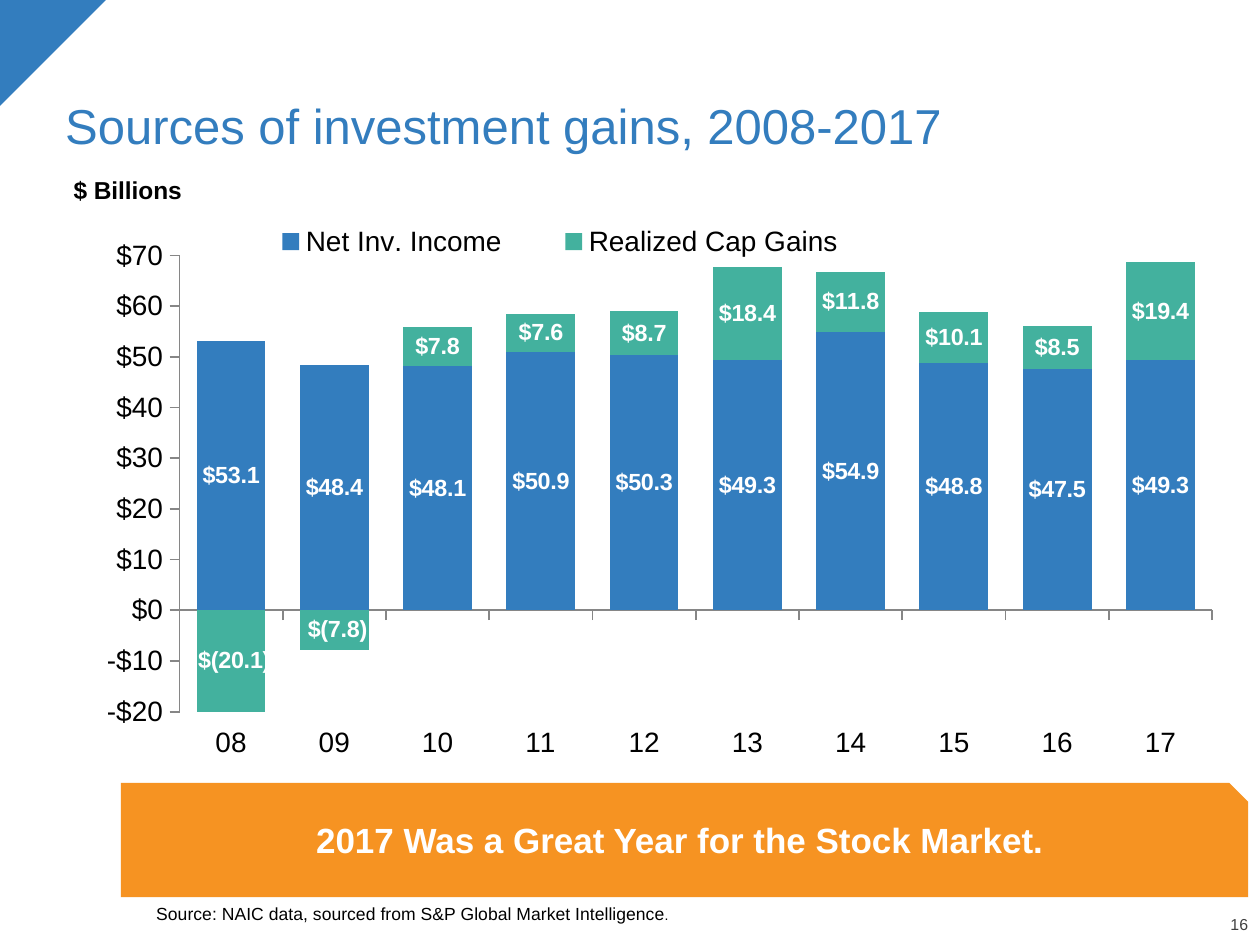
from lxml import etree
from pptx import Presentation
from pptx.chart.data import CategoryChartData
from pptx.dml.color import RGBColor
from pptx.enum.chart import (XL_CHART_TYPE, XL_LABEL_POSITION,
                             XL_LEGEND_POSITION, XL_TICK_LABEL_POSITION,
                             XL_TICK_MARK)
from pptx.enum.shapes import MSO_SHAPE
from pptx.enum.text import MSO_ANCHOR, PP_ALIGN
from pptx.oxml.ns import qn
from pptx.util import Inches, Pt

STACKED = XL_CHART_TYPE.COLUMN_STACKED
LABEL_CENTER = XL_LABEL_POSITION.CENTER
LEGEND_BOTTOM = XL_LEGEND_POSITION.BOTTOM
LABELS_LOW = XL_TICK_LABEL_POSITION.LOW
TICK_OUT, TICK_NONE = XL_TICK_MARK.OUTSIDE, XL_TICK_MARK.NONE
TRIANGLE, SNIPPED = MSO_SHAPE.RIGHT_TRIANGLE, MSO_SHAPE.SNIP_1_RECTANGLE
MIDDLE, BOTTOM = MSO_ANCHOR.MIDDLE, MSO_ANCHOR.BOTTOM
LEFT, CENTER, RIGHT = PP_ALIGN.LEFT, PP_ALIGN.CENTER, PP_ALIGN.RIGHT

FONT = "Arial"
BLUE, GREEN, ORANGE = "337DBE", "43B19E", "F69322"
BLACK, WHITE, GRAY, AXIS_GRAY = "000000", "FFFFFF", "404040", "868686"
LABEL_FORMAT = '_("$"* #,##0.0_);_("$"* \\(#,##0.0\\)'

YEARS = ["08", "09", "10", "11", "12", "13", "14", "15", "16", "17"]
SERIES = [
    ("Net Inv. Income", BLUE,
     [53.1, 48.4, 48.1, 50.9, 50.3, 49.3, 54.9, 48.8, 47.5, 49.3]),
    ("Realized Cap Gains", GREEN,
     [-20.1, -7.8, 7.8, 7.6, 8.7, 18.4, 11.8, 10.1, 8.5, 19.4]),
]


def color(value):
    return RGBColor.from_string(value)


def inches(box):
    return [Inches(length) for length in box]


def style_font(font, size, hex_color, bold=False):
    font.name = FONT
    font.size = Pt(size)
    font.bold = bold
    font.color.rgb = color(hex_color)


def write_text(shape, spans, hex_color, bold=False, align=LEFT,
               anchor=MIDDLE, insets=(0, 0, 0, 0), wrap=True):
    """Fill a shape with one paragraph of (text, size) spans."""
    frame = shape.text_frame
    frame.word_wrap = wrap
    frame.vertical_anchor = anchor
    (frame.margin_left, frame.margin_top,
     frame.margin_right, frame.margin_bottom) = inches(insets)
    para = frame.paragraphs[0]
    para.alignment = align
    para.line_spacing = 0.9
    for text, size in spans:
        span = para.add_run()
        span.text = text
        style_font(span.font, size, hex_color, bold)


def add_text(page, box, spans, hex_color, **options):
    write_text(page.shapes.add_textbox(*inches(box)), spans, hex_color,
               **options)


def add_filled(page, preset, box, fill):
    shape = page.shapes.add_shape(preset, *inches(box))
    shape.shadow.inherit = False
    shape.fill.solid()
    shape.fill.fore_color.rgb = color(fill)
    shape.line.fill.background()
    return shape


def manual_layout(x, y, width, height, inner=False):
    layout = etree.Element(qn("c:layout"))
    manual = etree.SubElement(layout, qn("c:manualLayout"))
    settings = [("xMode", "edge"), ("yMode", "edge"),
                ("x", x), ("y", y), ("w", width), ("h", height)]
    if inner:
        settings.insert(0, ("layoutTarget", "inner"))
    for tag, value in settings:
        etree.SubElement(manual, qn("c:" + tag)).set("val", str(value))
    return layout


def style_axis(axis):
    axis.has_major_gridlines = False
    axis.major_tick_mark = TICK_OUT
    axis.minor_tick_mark = TICK_NONE
    axis.tick_label_position = LABELS_LOW
    axis.format.line.color.rgb = color(AXIS_GRAY)
    axis.format.line.width = Pt(0.75)
    style_font(axis.tick_labels.font, 12, BLACK)


def add_gains_chart(page, box):
    data = CategoryChartData()
    data.categories = YEARS
    for name, _, values in SERIES:
        data.add_series(name, values)
    chart = page.shapes.add_chart(STACKED, *inches(box), data).chart
    chart.has_title = False
    style_font(chart.font, 12, BLACK)

    # Columns and their labels
    plot = chart.plots[0]
    plot.gap_width = 50
    plot.overlap = 100
    plot.vary_by_categories = False
    for series, (_, fill, _) in zip(plot.series, SERIES):
        series.invert_if_negative = False
        series.format.fill.solid()
        series.format.fill.fore_color.rgb = color(fill)
        labels = series.data_labels
        labels.show_value = True
        labels.position = LABEL_CENTER
        labels.number_format = LABEL_FORMAT
        labels.number_format_is_linked = False
        style_font(labels.font, 10, WHITE, bold=True)

    # Axes
    style_axis(chart.category_axis)
    amounts = chart.value_axis
    style_axis(amounts)
    amounts.minimum_scale, amounts.maximum_scale = -20, 70
    amounts.major_unit = 10
    amounts.tick_labels.number_format = '"$"#,##0'
    amounts.tick_labels.number_format_is_linked = False

    # Legend above the columns, and the plot area
    chart.has_legend = True
    chart.legend.position = LEGEND_BOTTOM
    chart.legend.include_in_layout = False
    style_font(chart.legend.font, 12, BLACK)
    root = chart._chartSpace
    position = root.find(".//" + qn("c:legendPos"))
    position.addnext(manual_layout(0.15, 0.02, 0.57, 0.07))
    area = root.find(".//" + qn("c:plotArea"))
    for layout in area.findall(qn("c:layout")):
        area.remove(layout)
    area.insert(0, manual_layout(0.108, 0.079, 0.887, 0.792, inner=True))


def add_heading(page, box):
    left, top, width, height = box
    padding = (0.1, 0.05, 0.1, 0.05)
    add_text(page, box, [("Sources of investment gains, 2008-2017", 21)],
             BLUE, anchor=BOTTOM, insets=padding)
    add_text(page, (left + 0.05, top + height + 0.04, 0.87, 0.26),
             [("$ Billions", 10.5)], BLACK, bold=True, insets=padding,
             wrap=False)


def add_callout(page, box):
    callout = add_filled(page, SNIPPED, box, ORANGE)
    write_text(callout,
               [("2017 Was a Great Year for the Stock Market.", 15)],
               WHITE, bold=True, align=CENTER,
               insets=(0.07, 0.04, 0.07, 0.07))


def add_footer(page, box):
    left, top, width, height = box
    source = "Source: NAIC data, sourced from S&P Global Market Intelligence"
    add_text(page, box, [(source, 7.5), (".", 6)], BLACK, anchor=BOTTOM)
    add_text(page, (left + width - 0.16, top + height - 0.04, 0.36, 0.1),
             [("16", 6.8)], GRAY, align=RIGHT, anchor=BOTTOM)


def main():
    deck = Presentation()
    deck.slide_width = Inches(7.5)
    deck.slide_height = Inches(5.625)  # 4:3 page
    page = deck.slides.add_slide(deck.slide_layouts[6])
    corner = add_filled(page, TRIANGLE, (0, 0, 0.63, 0.63), BLUE)
    corner.rotation = 90
    add_gains_chart(page, (0.32, 1.25, 6.93, 3.43))
    add_heading(page, (0.29, 0.19, 6.94, 0.78))
    add_footer(page, (0.93, 5.16, 6.3, 0.34))
    add_callout(page, (0.72, 4.66, 6.71, 0.68))
    deck.save("out.pptx")


if __name__ == "__main__":
    main()
